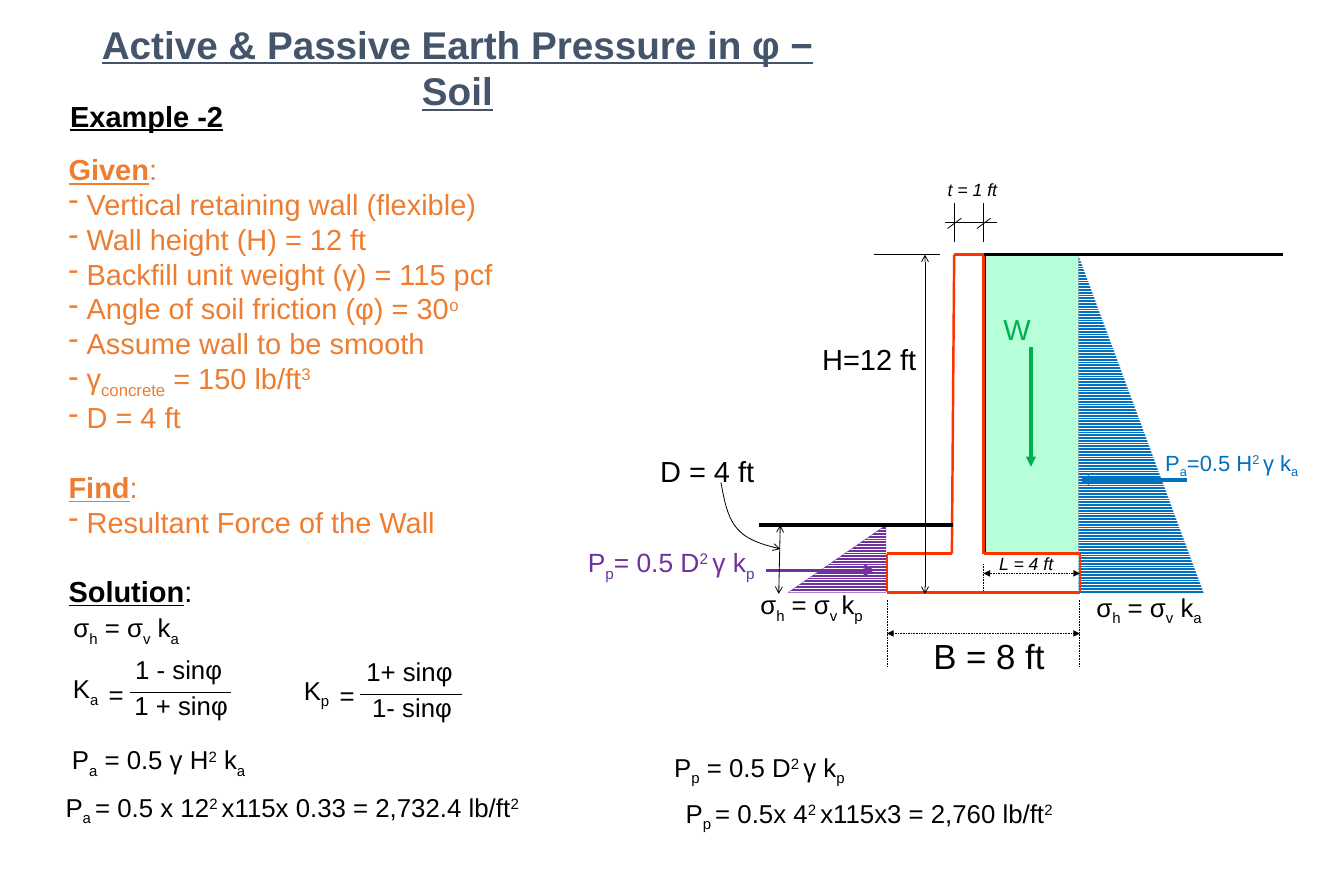
from lxml.etree import SubElement
from pptx import Presentation
from pptx.dml.color import RGBColor
from pptx.enum.dml import MSO_LINE, MSO_PATTERN
from pptx.enum.shapes import MSO_CONNECTOR, MSO_SHAPE
from pptx.enum.text import PP_ALIGN
from pptx.oxml.ns import qn
from pptx.util import Pt

BLACK, SLATE, ORANGE, RED = "000000", "44546A", "ED7D31", "FF3300"
BLUE, PURPLE, GREEN, MINT = "0070C0", "7030A0", "00B050", "B7FFD8"
rgb = RGBColor.from_string

deck = Presentation()
deck.slide_width, deck.slide_height = Pt(1224), Pt(792)
page = deck.slides.add_slide(deck.slide_layouts[6])
shapes = page.shapes


def write(text, left, top, width, height, size=23.5, color=BLACK, bold=False,
          italic=False, align=PP_ALIGN.CENTER, wrap=True, gap=0):
    box = shapes.add_textbox(Pt(left), Pt(top), Pt(width), Pt(height))
    frame = box.text_frame
    frame.word_wrap = wrap
    for index, row in enumerate(text.split("\n")):
        para = frame.paragraphs[0] if index == 0 else frame.add_paragraph()
        para.alignment = align
        if row.startswith("- "):
            row = row[2:]
            props = para._p.get_or_add_pPr()
            props.set("marL", str(Pt(16.4)))
            props.set("indent", str(-Pt(16.4)))
            SubElement(props, qn("a:buChar")).set("char", "-")
        elif index:
            para.space_before = Pt(gap)
        for part in row.split("|"):
            mark = part[0] if part[0] in "_^*" else ""
            span = para.add_run()
            span.text = part[len(mark):]
            font = span.font
            font.name, font.size, font.italic = "Arial", Pt(size), italic
            font.bold = font.underline = bold or mark == "*"
            font.color.rgb = rgb(BLACK if row.startswith("*Solution") else color)
            if mark in ("_", "^"):
                font._element.set("baseline", "-25000" if mark == "_" else "30000")


def stroke(shape, color, width, dash=None, head=None, tail=None):
    shape.line.color.rgb = rgb(color)
    shape.line.width = Pt(width)
    if dash:
        shape.line.dash_style = dash
    props = shape._element.spPr
    for tag, arrow in (("a:headEnd", head), ("a:tailEnd", tail)):
        if arrow:
            SubElement(props.find(qn("a:ln")), qn(tag)).set("type", arrow)
    SubElement(props, qn("a:effectLst"))


write("Active & Passive Earth Pressure in φ − Soil", 60, 15.1, 713, 49.7,
      size=35.2, color=SLATE, bold=True)
write("Example -2", 56.2, 85.7, 154.8, 39.6, size=26.4, bold=True, wrap=False)
write("*Given|:\n"
      "- Vertical retaining wall (flexible)\n"
      "- Wall height (H) = 12 ft\n"
      "- Backfill unit weight (γ) = 115 pcf\n"
      "- Angle of soil friction (φ) = 30|^o\n"
      "- Assume wall to be smooth\n"
      "- γ|_concrete| = 150 lb/ft|^3\n"
      "- D = 4 ft\n"
      "*Find|:\n"
      "- Resultant Force of the Wall\n"
      "*Solution|:", 55.4, 134.6, 523.4, 423.4,
      size=26.4, color=ORANGE, align=PP_ALIGN.LEFT, gap=31.5)

for name, above, below, left, top in (
        ("a", "1 - sinφ", "1 + sinφ", 55.4, 592),
        ("p", "1+ sinφ", "1- sinφ", 265.6, 593.4)):
    write(f"K|_{name} ", left, top + 17, 49, 36)
    write("=", left + 36.5, top + 22, 28, 36, wrap=False)
    write(above, left + 56.2, top, 102.2, 36)
    write(below, left + 38.7, top + 32.4, 141.8, 36)
    bar = shapes.add_connector(MSO_CONNECTOR.STRAIGHT, Pt(left + 62.6), Pt(top + 38.7),
                               Pt(left + 155.3), Pt(top + 38.7))
    stroke(bar, BLACK, 0.75)

top, soil, footing, base = 231.8, 478, 504, 539.3
toe, front, back, heel = 807.8, 869, 895.7, 983.5

backfill = shapes.add_shape(MSO_SHAPE.RECTANGLE, Pt(897), Pt(top), Pt(85), Pt(273))
backfill.fill.solid()
backfill.fill.fore_color.rgb = rgb(MINT)
stroke(backfill, BLACK, 0.75)

for color, edge, corners in (
        (BLUE, "E7E6E6", ((1096.6, 540.7), (982, top), (982, 540.7))),
        (PURPLE, PURPLE, ((717.8, base), (807, soil), (807, base)))):
    points = [(Pt(x), Pt(y)) for x, y in corners]
    builder = shapes.build_freeform(*points[0], scale=1.0)
    builder.add_line_segments(points[1:], close=True)
    pressure = builder.convert_to_shape()
    pressure.fill.patterned()
    pressure.fill.pattern = MSO_PATTERN.LIGHT_HORIZONTAL
    pressure.fill.fore_color.rgb = rgb(color)
    pressure.fill.back_color.rgb = rgb("FFFFFF")
    stroke(pressure, edge, 0.25)

wall = [(front, top), (back, top), (back, footing), (heel, footing),
        (heel, base), (toe, base), (toe, footing), (866.9, footing)]
lines = [(*start, *end, RED, 2.25) for start, end in zip(wall, wall[1:] + wall[:1])]
DOT = MSO_LINE.ROUND_DOT
lines += [
    (back, top, 1168.6, top, BLACK, 2.25),
    (867.6, soil, 691.2, soil, BLACK, 3),
    (1080.7, 437, 982.8, 437, BLUE, 3, None, None, "triangle"),
    (796.3, 519.1, 697.7, 519.1, PURPLE, 3, None, "arrow"),
    (856, top, 796.3, top, BLACK, 0.75),
    (842.4, top, 842.4, 540.7, BLACK, 0.75, None, "arrow", "arrow"),
    (710.6, soil, 709.2, 540.7, BLACK, 0.75, None, "arrow", "arrow"),
    (938.9, 316, 938.9, 424.8, GREEN, 3, None, None, "triangle"),
    (toe, 576.7, heel, 576.7, BLACK, 0.75, DOT, "triangle", "triangle"),
    (back, 513.4, back, 537.1, BLACK, 0.75, DOT),
    (back, 522, heel, 522, BLACK, 0.75, DOT, "triangle", "triangle"),
    (860.4, 202.3, 907.9, 202.3, BLACK, 0.75),
]
lines += [(x, 545.8, x, 607, BLACK, 0.75, DOT) for x in (toe, heel)]
for x in (front, back):
    lines += [(x, 220.3, x, 185, BLACK, 0.75),
              (x + 6.5, 198.7, x - 6, 208, BLACK, 0.75)]
for x1, y1, x2, y2, *style in lines:
    line = shapes.add_connector(MSO_CONNECTOR.STRAIGHT, Pt(x1), Pt(y1), Pt(x2), Pt(y2))
    stroke(line, *style)

leader_points = []
for bend in (((656.6, 439.2), (659.5, 455), (662.4, 471.6), (671.8, 481.7)),
             ((671.8, 481.7), (680.4, 491.8), (695.5, 496.1), (710.6, 499.7))):
    for step in range(13):
        t = step / 12
        weights = ((1 - t) ** 3, 3 * t * (1 - t) ** 2, 3 * t * t * (1 - t), t ** 3)
        leader_points.append(tuple(
            Pt(sum(w * point[axis] for w, point in zip(weights, bend))) for axis in (0, 1)))
builder = shapes.build_freeform(*leader_points[0], scale=1.0)
builder.add_line_segments(leader_points[1:], close=False)
leader = builder.convert_to_shape()
leader.fill.background()
stroke(leader, BLACK, 0.75, tail="arrow")

write("P|_a|=0.5 H|^2 |γ k|_a", 1015.2, 405.4, 213.1, 31.7, size=20, color=BLUE)
write("P|_p|= 0.5 D|^2 |γ k|_p", 504.7, 493.9, 213.1, 36, size=24, color=PURPLE)
for text, left, label_top, width, size, color, italic in (
        ("H=12 ft", 740.9, 307.4, 101.5, 26.4, BLACK, False),
        ("D = 4 ft", 593.3, 409, 101.5, 26.4, BLACK, False),
        ("W", 906.5, 280, 39.6, 26.4, GREEN, False),
        ("B = 8 ft", 842.4, 573.8, 116.6, 31.7, BLACK, False),
        ("L = 4 ft", 902.2, 499.7, 64.8, 16.1, BLACK, True),
        ("t = 1 ft", 855.4, 159.1, 60.5, 16.1, BLACK, True)):
    write(text, left, label_top, width, size * 1.5, size=size, color=color,
          italic=italic, wrap=False)

for text, left, formula_top, width in (
        ("σ|_h| = σ|_v| k|_a", 49, 553.7, 131.8),
        ("σ|_h| = σ|_v| k|_a", 980.6, 535, 131.8),
        ("σ|_h| = σ|_v |k|_p", 673.2, 532.8, 131.8),
        ("P|_a| = 0.5 γ H|^2| k|_a", 49, 673.9, 190.8),
        ("P|_a |= 0.5 x 12|^2 |x115x 0.33 = 2,732.4 lb/ft|^2", 49, 717.1, 434.2),
        ("P|_p| = 0.5 D|^2 |γ k|_p", 596.2, 680.4, 190.8),
        ("P|_p |= 0.5x 4|^2 |x115x3 = 2,760 lb/ft|^2", 612.7, 722.2, 357.8)):
    write(text, left, formula_top, width, 36)

deck.save("out.pptx")
